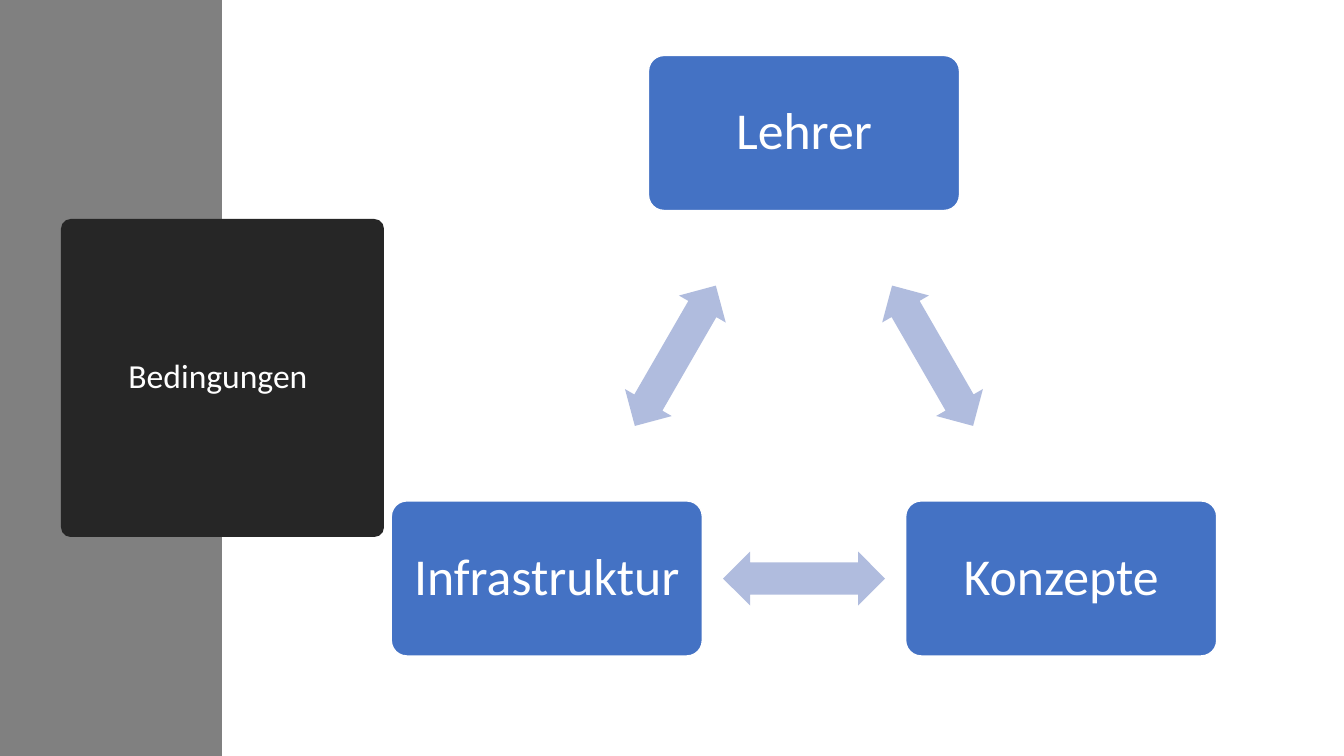
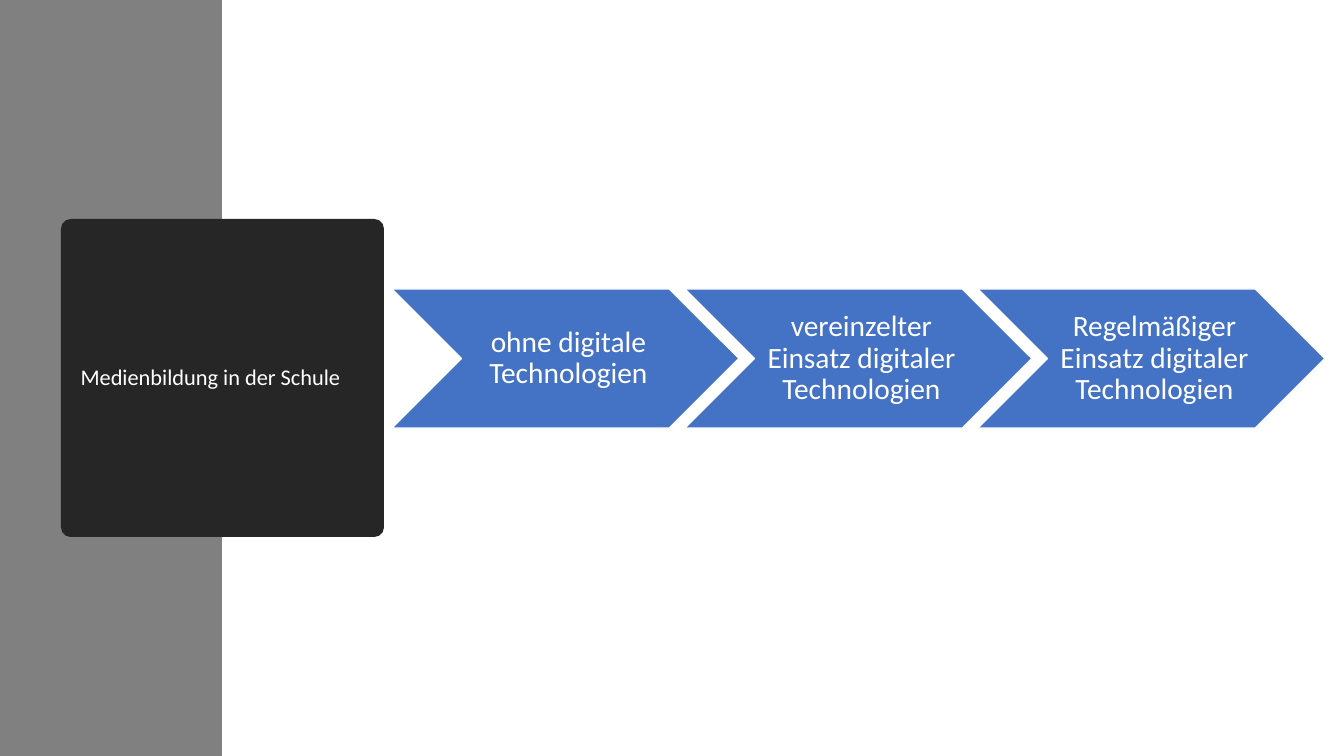
from dataclasses import dataclass
from math import cos, radians, sin

from pptx import Presentation
from pptx.dml.color import RGBColor
from pptx.enum.shapes import MSO_SHAPE
from pptx.enum.text import MSO_ANCHOR, PP_ALIGN
from pptx.util import Emu, Pt

RECTANGLE = MSO_SHAPE.RECTANGLE
ROUNDED = MSO_SHAPE.ROUNDED_RECTANGLE
CHEVRON = MSO_SHAPE.CHEVRON
DOUBLE_ARROW = MSO_SHAPE.LEFT_RIGHT_ARROW
MIDDLE = MSO_ANCHOR.MIDDLE
CENTER = PP_ALIGN.CENTER

PX_PER_INCH = 100.8
SLIDE_WIDTH, SLIDE_HEIGHT = 1344, 756


@dataclass(frozen=True)
class Theme:
    font: str = "Calibri"
    band: str = "808080"
    title_box: str = "262626"
    accent: str = "4472C4"
    arrow: str = "B0BCDE"
    white: str = "FFFFFF"
    node_size: int = 37
    step_size: int = 21
    line_spacing: float = 0.9


THEME = Theme()

CONDITIONS = {
    "title": "Bedingungen",
    "title_size": 24,
    "title_insets": (10, 5, 19, 5),
    "nodes": ["Lehrer", "Konzepte", "Infrastruktur"],
}
MEDIA_EDUCATION = {
    "title": "Medienbildung in der Schule",
    "title_size": 16,
    "title_insets": (10, 5, 34, 5),
    "steps": [
        "ohne digitale Technologien",
        "vereinzelter Einsatz digitaler Technologien",
        "Regelmäßiger Einsatz digitaler Technologien",
    ],
}

BAND = (0, 0, 222, SLIDE_HEIGHT)
TITLE_BOX = (61, 219, 323, 318)
CYCLE_CENTER, CYCLE_RADIUS = (804, 430), 297
NODE_WIDTH, NODE_HEIGHT = 311, 155
NODE_INSETS = (15, 15, 15, 15)
ARROW_WIDTH, ARROW_HEIGHT = 162, 54
STEP_LEFT, STEP_TOP, STEP_WIDTH, STEP_HEIGHT = 392, 289, 347, 139
STEP_PITCH = 293
STEP_INSETS = (9, 3, 3, 3)


def px(value):
    return Emu(round(value * 914400 / PX_PER_INCH))


def add_shape(page, kind, area, fill, outline=None, adjustments=()):
    shape = page.shapes.add_shape(kind, *map(px, area))
    shape.shadow.inherit = False
    shape.fill.solid()
    shape.fill.fore_color.rgb = RGBColor.from_string(fill)
    if outline:
        shape.line.color.rgb = RGBColor.from_string(outline)
        shape.line.width = Pt(1)
    else:
        shape.line.fill.background()
    for index, value in enumerate(adjustments):
        shape.adjustments[index] = value
    return shape


def write(shape, text, size, insets):
    frame = shape.text_frame
    frame.word_wrap = True
    frame.vertical_anchor = MIDDLE
    (frame.margin_left, frame.margin_top,
     frame.margin_right, frame.margin_bottom) = map(px, insets)
    para = frame.paragraphs[0]
    para.alignment = CENTER
    para.line_spacing = THEME.line_spacing
    span = para.add_run()
    span.text = text
    span.font.name = THEME.font
    span.font.size = Pt(size)
    span.font.color.rgb = RGBColor.from_string(THEME.white)


def centered(center, width, height):
    return center[0] - width / 2, center[1] - height / 2, width, height


def add_page(deck, content):
    page = deck.slides.add_slide(deck.slide_layouts[6])
    add_shape(page, RECTANGLE, BAND, THEME.band)
    box = add_shape(page, ROUNDED, TITLE_BOX, THEME.title_box, adjustments=[0.03])
    write(box, content["title"], content["title_size"], content["title_insets"])
    return page


def add_cycle(page, nodes):
    turn = 360 / len(nodes)
    angles = [radians(turn * index - 90) for index in range(len(nodes))]
    centers = [
        (CYCLE_CENTER[0] + CYCLE_RADIUS * cos(angle),
         CYCLE_CENTER[1] + CYCLE_RADIUS * sin(angle))
        for angle in angles
    ]
    following = centers[1:] + centers[:1]
    for index, (text, start, end) in enumerate(zip(nodes, centers, following)):
        node = add_shape(page, ROUNDED, centered(start, NODE_WIDTH, NODE_HEIGHT),
                         THEME.accent, THEME.white, [0.1])
        write(node, text, THEME.node_size, NODE_INSETS)
        midpoint = ((start[0] + end[0]) / 2, (start[1] + end[1]) / 2)
        arrow = add_shape(page, DOUBLE_ARROW,
                          centered(midpoint, ARROW_WIDTH, ARROW_HEIGHT),
                          THEME.arrow, adjustments=[0.6, 0.5])
        arrow.rotation = turn * (index + 0.5)


def add_process(page, steps):
    for index, text in enumerate(steps):
        area = (STEP_LEFT + index * STEP_PITCH, STEP_TOP, STEP_WIDTH, STEP_HEIGHT)
        step = add_shape(page, CHEVRON, area, THEME.accent, THEME.white)
        write(step, text, THEME.step_size, STEP_INSETS)


def main():
    deck = Presentation()
    deck.slide_width, deck.slide_height = px(SLIDE_WIDTH), px(SLIDE_HEIGHT)
    add_cycle(add_page(deck, CONDITIONS), CONDITIONS["nodes"])
    add_process(add_page(deck, MEDIA_EDUCATION), MEDIA_EDUCATION["steps"])
    deck.save("out.pptx")


if __name__ == "__main__":
    main()
